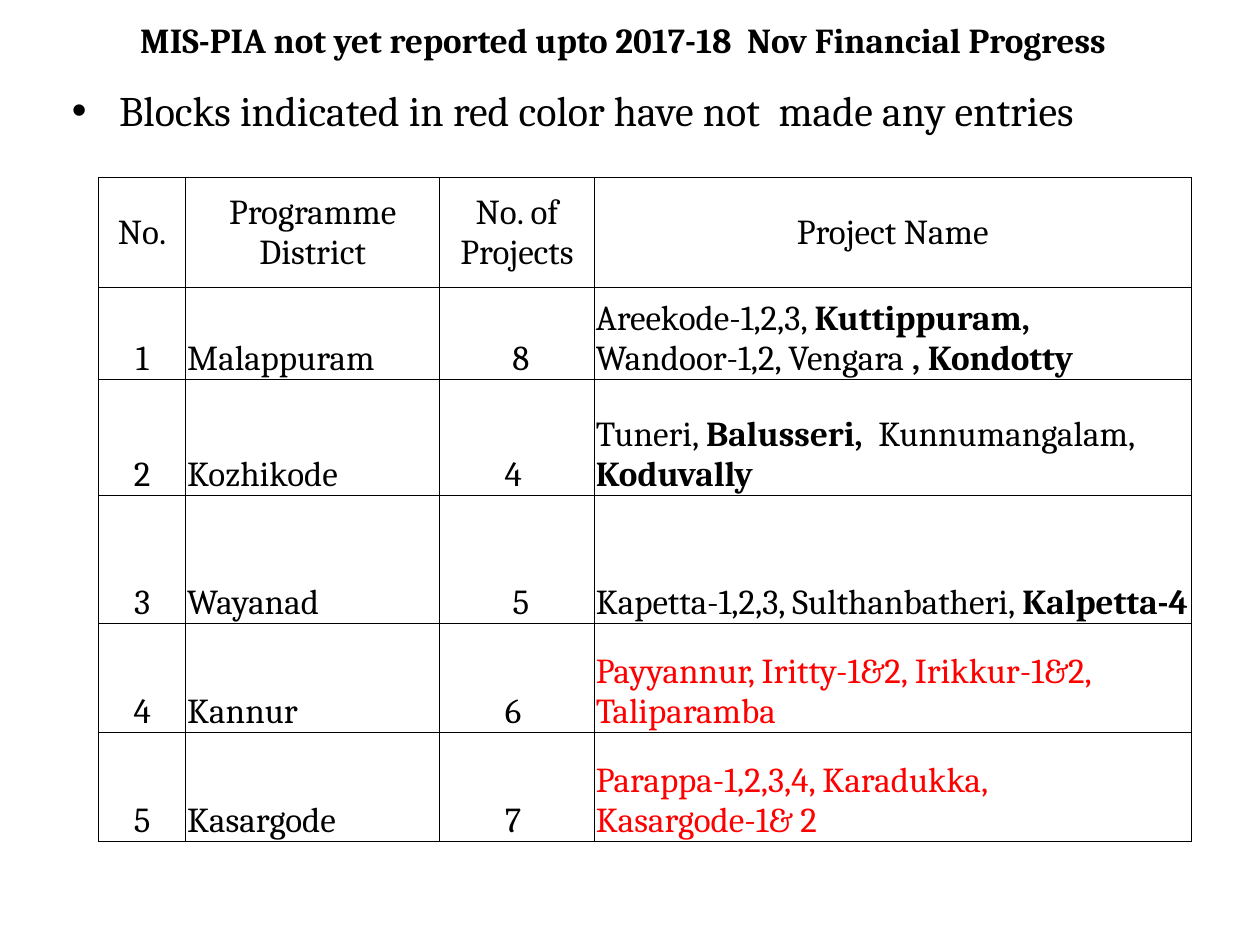
from pptx import Presentation
from pptx.util import Pt
from pptx.dml.color import RGBColor
from pptx.enum.text import MSO_ANCHOR, MSO_AUTO_SIZE, PP_ALIGN
from pptx.oxml import parse_xml
from pptx.oxml.ns import nsdecls
from lxml.etree import SubElement

HUES = {"ink": "000000", "red": "FF0000"}
FONT = "Cambria"
COLS = [50, 145, 88.5, 341]
ROWS = [62.5, 53, 66, 73, 62.5, 62.5]
HEAD = ["No.", "Programme District", "No. of Projects", "Project Name"]

# District, count, projects (bold between asterisks), colour of projects
DATA = [
    ("Malappuram", " 8",
     "Areekode-1,2,3, *Kuttippuram,  *Wandoor-1,2, Vengara *, Kondotty*", "ink"),
    ("Kozhikode", "4 ", "Tuneri, *Balusseri,  *Kunnumangalam, *Koduvally*", "ink"),
    ("Wayanad", " 5", "Kapetta-1,2,3, Sulthanbatheri, *Kalpetta-4*", "ink"),
    ("Kannur", "6 ", "Payyannur, Iritty-1&2, Irikkur-1&2, Taliparamba", "red"),
    ("Kasargode", "7 ", "Parappa-1,2,3,4, Karadukka, Kasargode-1& 2", "red"),
]


def style(run, size, hue="ink", bold=False):
    font = run.font
    font.name, font.size, font.bold = FONT, Pt(size), bold
    font.color.rgb = RGBColor.from_string(HUES[hue])


def add_text(slide, box, text, size, bold=False):
    frame = slide.shapes.add_textbox(*map(Pt, box)).text_frame
    frame.word_wrap = True
    frame.auto_size = MSO_AUTO_SIZE.NONE
    frame.text = text
    for run in frame.paragraphs[0].runs:
        style(run, size, bold=bold)
    return frame


def add_bullet(para, indent):
    props = para._p.get_or_add_pPr()
    props.set("marL", str(Pt(indent)))
    props.set("indent", str(-Pt(indent)))
    props.append(parse_xml(f'<a:buFont {nsdecls("a")} typeface="Arial"/>'))
    props.append(parse_xml(f'<a:buChar {nsdecls("a")} char="•"/>'))


def add_edges(cell):
    props = cell._tc.get_or_add_tcPr()
    for at, side in enumerate(("lnL", "lnR", "lnT", "lnB")):
        props.insert(at, parse_xml(
            f'<a:{side} {nsdecls("a")} w="{Pt(0.5)}"><a:solidFill>'
            f'<a:srgbClr val="{HUES["ink"]}"/></a:solidFill></a:{side}>'))


def fill_cell(cell, text, align, anchor, hue="ink"):
    cell.fill.background()
    cell.margin_left = cell.margin_right = cell.margin_top = Pt(0.75)
    cell.margin_bottom = 0
    cell.vertical_anchor = anchor
    para = cell.text_frame.paragraphs[0]
    para.alignment = align
    for at, part in enumerate(text.split("*")):
        if part:
            run = para.add_run()
            run.text = part
            style(run, 20, hue, bold=at % 2 == 1)
    add_edges(cell)


def add_grid(slide):
    table = slide.shapes.add_table(
        len(ROWS), len(COLS), Pt(56.25), Pt(101.5),
        Pt(sum(COLS)), Pt(sum(ROWS))).table
    table.first_row = table.horz_banding = False
    for col, width in zip(table.columns, COLS):
        col.width = Pt(width)
    for row, height in zip(table.rows, ROWS):
        row.height = Pt(height)

    # Header row
    for at, text in enumerate(HEAD):
        fill_cell(table.cell(0, at), text, PP_ALIGN.CENTER, MSO_ANCHOR.MIDDLE)

    # One row for each district
    for num, (place, count, names, hue) in enumerate(DATA, 1):
        for at, text in enumerate((str(num), place, count, names)):
            align = PP_ALIGN.LEFT if at % 2 else PP_ALIGN.CENTER
            fill_cell(table.cell(num, at), text, align, MSO_ANCHOR.BOTTOM,
                      hue if at == 3 else "ink")


def main():
    deck = Presentation()
    deck.slide_width, deck.slide_height = Pt(720), Pt(540)
    slide = deck.slides.add_slide(deck.slide_layouts[6])

    # Title, ending in a line break
    title = add_text(
        slide, (60, 22.5, 592.5, 24),
        "MIS-PIA not yet reported upto 2017-18  Nov Financial Progress\v", 20, True)
    title.vertical_anchor = MSO_ANCHOR.MIDDLE
    para = title.paragraphs[0]
    para.alignment = PP_ALIGN.CENTER
    SubElement(para._p, "{http://schemas.openxmlformats.org/drawingml/2006/main}endParaRPr",
               sz="2000")

    # Note
    note = add_text(slide, (34, 44.75, 626, 39.5),
                    "Blocks indicated in red color have not  made any entries", 24)
    note.paragraphs[0].space_before = Pt(4.8)
    add_bullet(note.paragraphs[0], 27)

    # Table of districts
    add_grid(slide)
    deck.save("out.pptx")


if __name__ == "__main__":
    main()
